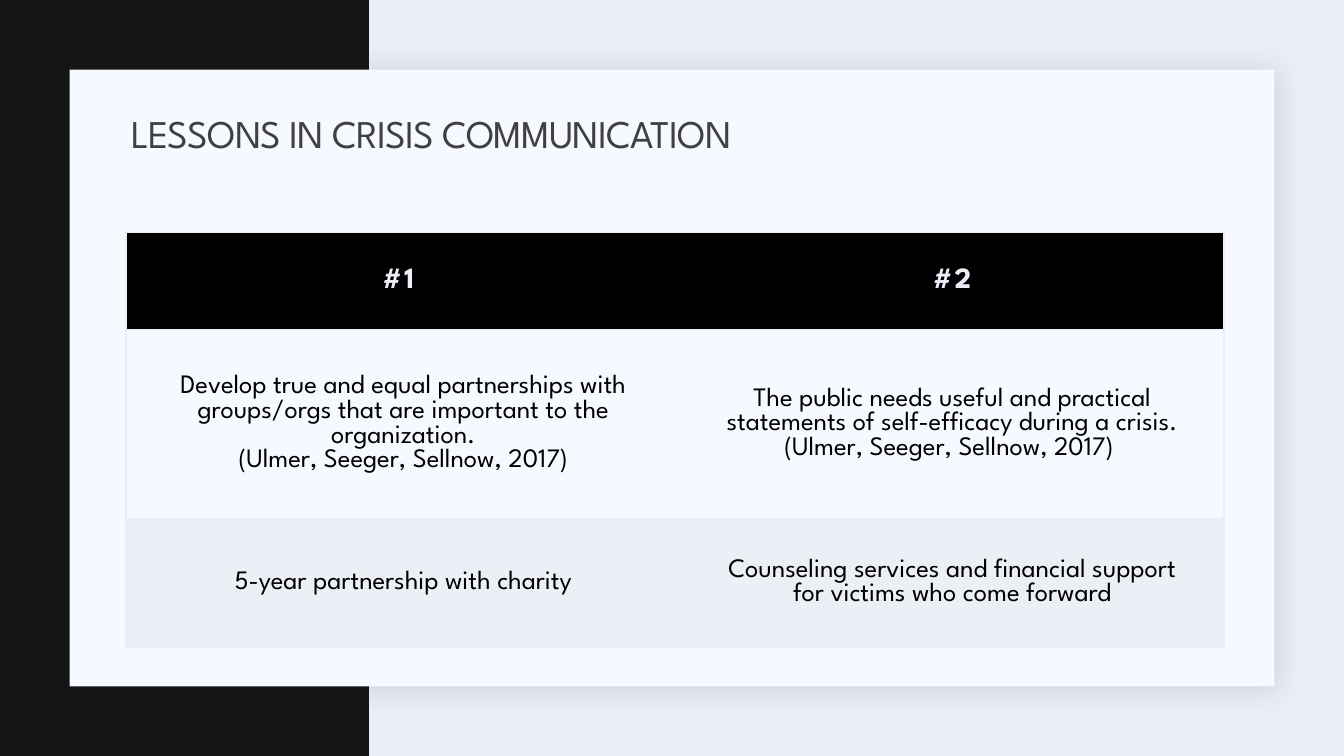
from dataclasses import dataclass

from lxml.etree import SubElement
from pptx import Presentation
from pptx.dml.color import RGBColor
from pptx.enum.shapes import MSO_SHAPE
from pptx.enum.text import MSO_ANCHOR, PP_ALIGN
from pptx.oxml.ns import qn
from pptx.util import Inches, Pt


@dataclass(frozen=True)
class Theme:
    font: str = "League Spartan"
    backdrop: str = "ECEEF7"
    band: str = "141514"
    panel: str = "F6F9FF"
    shadow: str = "1F2125"
    heading: str = "404040"
    header_fill: str = "000000"
    body_text: str = "000000"
    example_fill: str = "EDEFF7"
    title_size: int = 28
    header_size: int = 21
    body_size: int = 19


theme = Theme()


def add_run(paragraph, text, size, color, bold=False, spacing=0):
    run = paragraph.add_run()
    run.text = text
    run.font.name = theme.font
    run.font.size = Pt(size)
    run.font.bold = bold
    run.font.color.rgb = RGBColor.from_string(color)
    run.font._element.set("spc", str(spacing))


def add_block(shapes, left, top, width, height, color):
    block = shapes.add_shape(MSO_SHAPE.RECTANGLE, left, top, width, height)
    block.shadow.inherit = False
    block.fill.solid()
    block.fill.fore_color.rgb = RGBColor.from_string(color)
    block.line.fill.background()
    return block


deck = Presentation()
deck.slide_width = Inches(13.33)
deck.slide_height = Inches(7.5)
slide = deck.slides.add_slide(deck.slide_layouts[5])
slide.background.fill.solid()
slide.background.fill.fore_color.rgb = RGBColor.from_string(theme.backdrop)

margin = Inches(0.69)
add_block(slide.shapes, 0, 0, Inches(3.66), deck.slide_height, theme.band)
panel = add_block(slide.shapes, margin, margin, deck.slide_width - 2 * margin,
                  deck.slide_height - 2 * margin, theme.panel)
effects = panel._element.spPr.find(qn("a:effectLst"))
shadow = SubElement(effects, qn("a:outerShdw"), blurRad=str(Pt(20)), dist=str(Pt(2)),
                    dir=str(45 * 60000), algn="tl", rotWithShape="0")
shadow_color = SubElement(shadow, qn("a:srgbClr"), val=theme.shadow)
SubElement(shadow_color, qn("a:alpha"), val="15000")

title = slide.shapes.title
slide.shapes._spTree.append(title._element)
title.left, title.top, title.width, title.height = map(Inches, (1.2, 1.03, 11, 0.64))
title.text_frame.vertical_anchor = MSO_ANCHOR.MIDDLE
heading = title.text_frame.paragraphs[0]
heading.alignment = PP_ALIGN.LEFT
heading.line_spacing = 0.9
add_run(heading, "LESSONS IN CRISIS COMMUNICATION", theme.title_size, theme.heading, spacing=-50)

citation = "(Ulmer, Seeger, Sellnow, 2017)"
lessons = [
    [["#1 "], ["#2"]],
    [["Develop true and equal partnerships with groups/orgs that are important to the organization.",
      citation],
     ["The public needs useful and practical statements of self-efficacy during a crisis.",
      citation + " "]],
    [["5-year partnership with charity"],
     ["Counseling services and financial support for victims who come forward"]],
]
column_widths = [5.5, 5.39]
row_heights = [0.96, 1.88, 1.27]
row_fills = [theme.header_fill, theme.panel, theme.example_fill]
outer_sides = ["lnL", "lnR"]

lesson_table = slide.shapes.add_table(
    len(row_heights), len(column_widths), Inches(1.25), Inches(2.31),
    Inches(sum(column_widths)), Inches(sum(row_heights))).table
lesson_table.horz_banding = False
for column, width in zip(lesson_table.columns, column_widths):
    column.width = Inches(width)

for row_index, row in enumerate(lessons):
    lesson_table.rows[row_index].height = Inches(row_heights[row_index])
    is_header = row_index == 0
    for column_index, statements in enumerate(row):
        cell = lesson_table.cell(row_index, column_index)
        cell.vertical_anchor = MSO_ANCHOR.MIDDLE
        cell.margin_left = cell.margin_right = Inches(0.29)
        cell.margin_top = cell.margin_bottom = Inches(0.29)
        properties = cell._tc.get_or_add_tcPr()
        for side in ("lnL", "lnR", "lnT", "lnB"):
            border = SubElement(properties, qn(f"a:{side}"), w=str(Pt(1)))
            if side in outer_sides and side != outer_sides[column_index]:
                SubElement(border, qn("a:noFill"))
            else:
                border_fill = SubElement(border, qn("a:solidFill"))
                SubElement(border_fill, qn("a:srgbClr"), val=theme.backdrop)
        cell.fill.solid()
        cell.fill.fore_color.rgb = RGBColor.from_string(row_fills[row_index])
        for position, statement in enumerate(statements):
            frame = cell.text_frame
            paragraph = frame.add_paragraph() if position else frame.paragraphs[0]
            paragraph.alignment = PP_ALIGN.CENTER
            if is_header:
                add_run(paragraph, statement, theme.header_size, theme.backdrop, True, 150)
            else:
                add_run(paragraph, statement, theme.body_size, theme.body_text)

deck.save("out.pptx")
